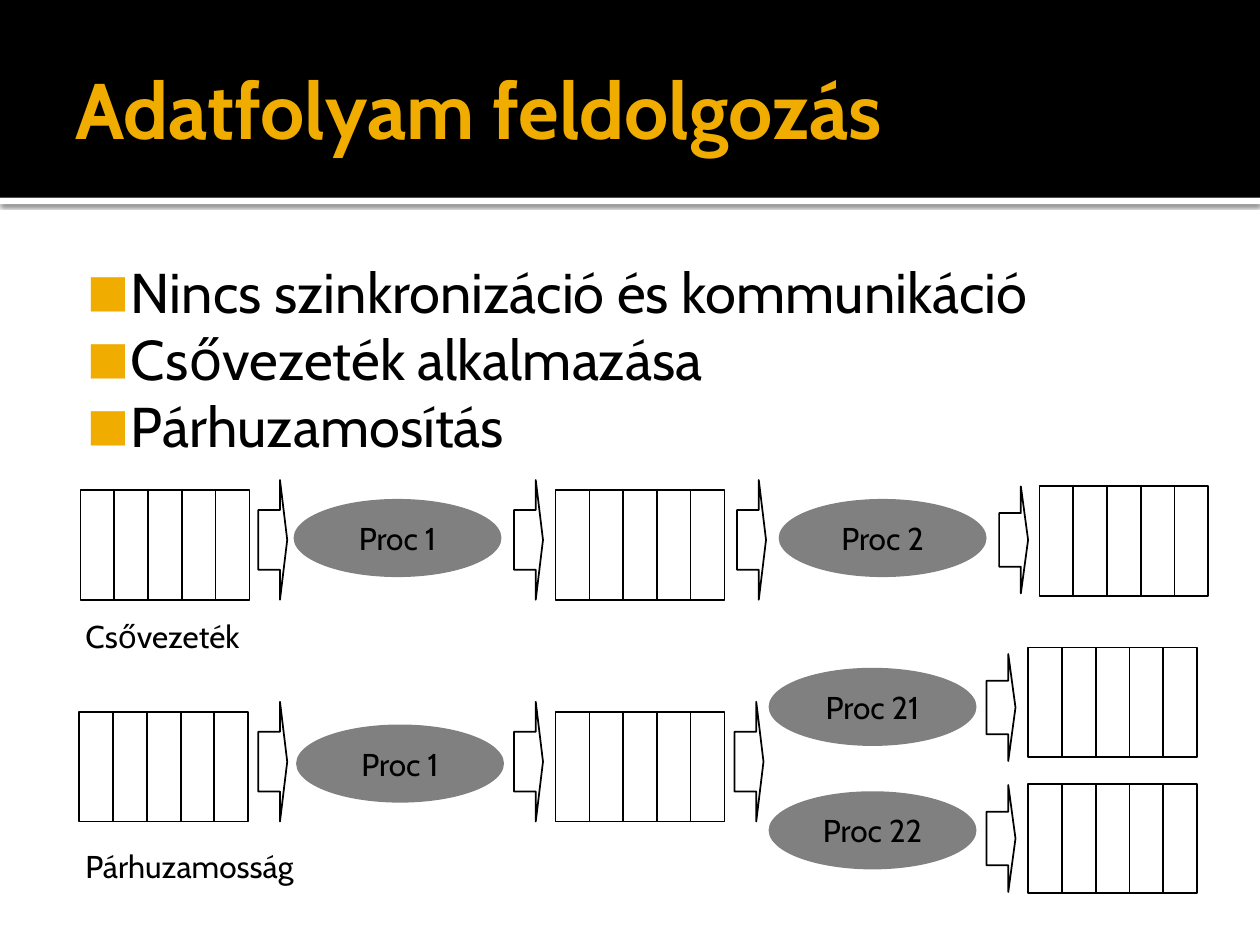
from lxml import etree
from pptx import Presentation
from pptx.dml.color import RGBColor
from pptx.enum.shapes import MSO_SHAPE
from pptx.enum.text import MSO_ANCHOR, PP_ALIGN
from pptx.oxml.ns import qn
from pptx.util import Inches, Pt

RECT, OVAL, ARROW = MSO_SHAPE.RECTANGLE, MSO_SHAPE.OVAL, MSO_SHAPE.RIGHT_ARROW
MIDDLE, TOP = MSO_ANCHOR.MIDDLE, MSO_ANCHOR.TOP
LEFT, CENTER = PP_ALIGN.LEFT, PP_ALIGN.CENTER
FONT, BLACK, WHITE, GOLD, GREY = "Cabin", "000000", "FFFFFF", "F0AD00", "808080"

# The slide is a grid of 100 columns by 75 rows; boxes are (left, top, width, height)
UNIT = Inches(0.1)
BUFFER_SIZE, OVAL_SIZE = (13.4, 8.7), (16.5, 6.2)
TALL_ARROW, SHORT_ARROW = (2.3, 9.5), (2.3, 8.5)


def grid(*lengths):
    return [round(length * UNIT) for length in lengths]


def color(value):
    return RGBColor.from_string(value)


def add_part(shapes, kind, box, fill=None, line=None):
    part = shapes.add_shape(kind, *grid(*box))
    part.shadow.inherit = False
    if fill:
        part.fill.solid()
        part.fill.fore_color.rgb = color(fill)
    else:
        part.fill.background()
    if line:
        part.line.color.rgb = color(line)
        part.line.width = Pt(1)
    else:
        part.line.fill.background()
    return part


def write(part, text, size, ink=BLACK, bold=False, align=LEFT, anchor=TOP,
          insets=(1, 0.5, 1, 0.5)):
    frame = part.text_frame
    frame.word_wrap = True
    frame.vertical_anchor = anchor
    (frame.margin_left, frame.margin_top,
     frame.margin_right, frame.margin_bottom) = grid(*insets)
    frame.text = text
    for para in frame.paragraphs:
        para.alignment = align
        for span in para.runs:
            span.font.name, span.font.size, span.font.bold = FONT, Pt(size), bold
            span.font.color.rgb = color(ink)
    return frame


def add_header(shapes, box):
    left, top, width, height = box
    # White strip with a soft shadow under the band
    strip = add_part(shapes, RECT, (left, top + height, width, 0.5), WHITE)
    effects = strip._element.spPr.find(qn("a:effectLst"))
    shadow = etree.SubElement(effects, qn("a:outerShdw"), blurRad=str(Pt(2.5)),
                              dist=str(Pt(0.8)), dir="5400000", rotWithShape="0")
    tint = etree.SubElement(shadow, qn("a:srgbClr"), val=BLACK)
    etree.SubElement(tint, qn("a:alpha"), val="60000")
    # Band and title
    add_part(shapes, RECT, box, BLACK)
    title = shapes.add_textbox(*grid(left + 5, top + 1.7, width - 10, height - 2))
    write(title, "Adatfolyam feldolgozás", 45, GOLD, True, anchor=MIDDLE,
          insets=(1, 0.5, 0.5, 0.5))


def add_bullets(shapes, box, lines):
    body = shapes.add_textbox(*grid(*box))
    frame = write(body, "\n".join(lines), 32, insets=(0.6, 1, 1, 0.5))
    for para in frame.paragraphs:
        props = para._p.get_or_add_pPr()
        props.set("marL", str(Inches(0.48)))
        props.set("indent", str(Inches(-0.35)))
        tint = etree.SubElement(props, qn("a:buClr"))
        etree.SubElement(tint, qn("a:srgbClr"), val=GOLD)
        etree.SubElement(props, qn("a:buSzPct"), val="80000")
        etree.SubElement(props, qn("a:buFont"), typeface=FONT)
        etree.SubElement(props, qn("a:buChar"), char="■")


def add_buffer(shapes, left, top):
    # Three nested frames divide the buffer into five equal cells
    width, height = BUFFER_SIZE
    for cells in (5, 3, 1):
        inner = width * cells / 5
        add_part(shapes, RECT, (left + (width - inner) / 2, top, inner, height),
                 line=BLACK)


def add_arrow(shapes, left, top, size):
    arrow = add_part(shapes, ARROW, (left, top, *size), line=BLACK)
    arrow.adjustments[0], arrow.adjustments[1] = 0.5, 0.25


def add_process(shapes, left, top, name):
    oval = add_part(shapes, OVAL, (left, top, *OVAL_SIZE), GREY)
    write(oval, name, 18, align=CENTER, anchor=MIDDLE)


def add_lane(slide, box, caption, caption_top, buffers, arrows, processes):
    """Draw one flow; all positions are offsets from the lane's box."""
    left, top, width, _ = box
    shapes = slide.shapes.add_group_shape().shapes
    for x, y in buffers:
        add_buffer(shapes, left + x, top + y)
    for x, y, size in arrows:
        add_arrow(shapes, left + x, top + y, size)
    for x, y, name in processes:
        add_process(shapes, left + x, top + y, name)
    label = shapes.add_textbox(*grid(left, top + caption_top, width / 3, 4))
    write(label, caption, 18)


def main():
    deck = Presentation()
    deck.slide_width, deck.slide_height = grid(100, 75)
    page = deck.slides.add_slide(deck.slide_layouts[6])

    add_header(page.shapes, (0, 0, 100, 15.7))
    add_bullets(page.shapes, (5, 19.4, 90, 50.6),
                ["Nincs szinkronizáció és kommunikáció",
                 "Csővezeték alkalmazása", "Párhuzamosítás"])

    # Pipeline: one process after another
    add_lane(page, (5.8, 38.1, 90, 14.4), "Csővezeték", 10.4,
             buffers=[(0.6, 0.8), (38.3, 0.8), (76.7, 0.5)],
             arrows=[(14.7, 0, TALL_ARROW), (35, 0, TALL_ARROW),
                     (52.7, 0, TALL_ARROW), (73.5, 0.5, SHORT_ARROW)],
             processes=[(17.5, 1.5, "Proc 1"), (56, 1.5, "Proc 2")])

    # Parallel flow: the second step splits in two
    add_lane(page, (5.8, 51.4, 90, 19.5), "Párhuzamosság", 15.3,
             buffers=[(0.5, 5.1), (38.3, 5.1), (75.8, 0), (75.8, 10.8)],
             arrows=[(14.7, 4.3, TALL_ARROW), (35, 4.3, TALL_ARROW),
                     (52.5, 4.3, TALL_ARROW), (72.5, 0.5, SHORT_ARROW),
                     (72.5, 10.9, SHORT_ARROW)],
             processes=[(17.7, 6.1, "Proc 1"), (55.2, 1.6, "Proc 21"),
                        (55.2, 11.4, "Proc 22")])

    deck.save("out.pptx")


if __name__ == "__main__":
    main()
